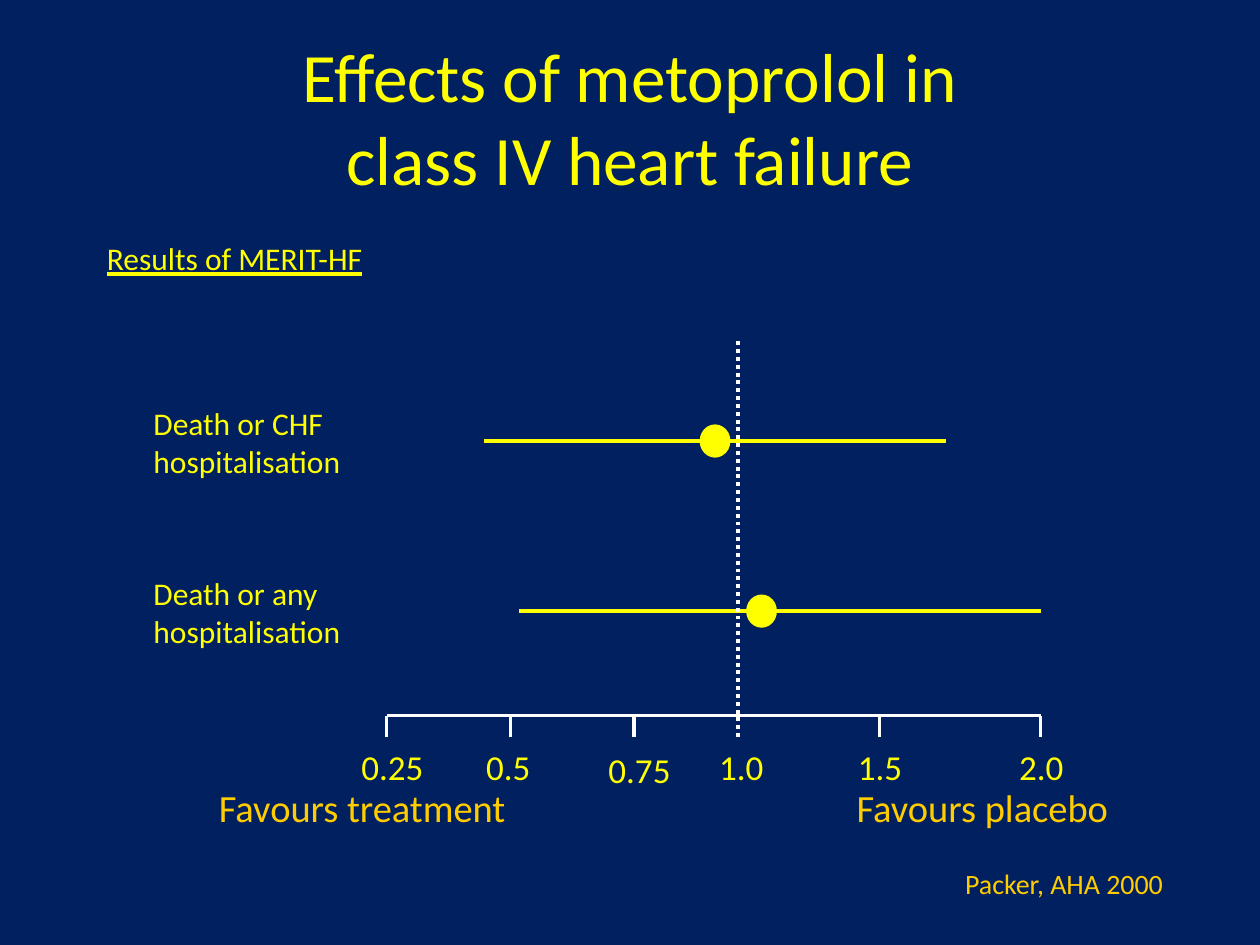
from pptx import Presentation
from pptx.dml.color import RGBColor
from pptx.enum.dml import MSO_LINE
from pptx.enum.shapes import MSO_CONNECTOR, MSO_SHAPE
from pptx.enum.text import MSO_ANCHOR, PP_ALIGN
from pptx.oxml.ns import qn
from pptx.util import Pt
from lxml.etree import SubElement

NAVY, YELLOW, GOLD, WHITE = "002060", "FFFF00", "FFCC00", "FFFFFF"
AXIS_Y, TICK_BOTTOM = 409, 421
AXIS_LEFT, AXIS_RIGHT = 221, 594.7
TICKS = [AXIS_LEFT, 291.6, 362.2, 502.6, AXIS_RIGHT]
SCALE = [
    ("0.25", 199.4, 422.6),
    ("0.5", 270.7, 422.6),
    ("0.75", 340.6, 424.1),
    ("1.0", 403.9, 422.6),
    ("1.5", 483.1, 422.6),
    ("2.0", 575.3, 422.6),
]
OUTCOMES = [
    (["Death or CHF", "hospitalisation"], 252, 276.5, 408.6, 540.7),
    (["Death or any", "hospitalisation"], 349.2, 296.6, 435.2, AXIS_RIGHT),
]


def paint(target, color):
    target.solid()
    target.fore_color.rgb = RGBColor.from_string(color)


def add_text(slide, lines, left, top, width, height, size, color=YELLOW,
             align=PP_ALIGN.LEFT, anchor=MSO_ANCHOR.TOP, underline=None):
    frame = slide.shapes.add_textbox(Pt(left), Pt(top), Pt(width), Pt(height)).text_frame
    frame.word_wrap = True
    frame.vertical_anchor = anchor
    frame.text = "\n".join(lines)
    for paragraph in frame.paragraphs:
        paragraph.alignment = align
        font = paragraph.font
        font.name, font.size, font.underline = "Calibri", Pt(size), underline
        font.color.rgb = RGBColor.from_string(color)


def add_line(slide, x1, y1, x2, y2, color, weight, dash=None):
    connector = slide.shapes.add_connector(
        MSO_CONNECTOR.STRAIGHT, Pt(x1), Pt(y1), Pt(x2), Pt(y2))
    paint(connector.line.fill, color)
    connector.line.width = Pt(weight)
    if dash:
        connector.line.dash_style = dash
    SubElement(connector._element.spPr, qn("a:effectLst"))


def add_estimate(slide, x, y, width=16.6, height=18):
    estimate = slide.shapes.add_shape(
        MSO_SHAPE.OVAL, Pt(x - width / 2), Pt(y - height / 2), Pt(width), Pt(height))
    estimate.shadow.inherit = False
    paint(estimate.fill, YELLOW)
    paint(estimate.line.fill, YELLOW)
    estimate.line.width = Pt(1)


def add_axis(slide):
    add_line(slide, AXIS_LEFT, AXIS_Y, AXIS_RIGHT, AXIS_Y, WHITE, 2)
    for x in TICKS:
        add_line(slide, x, TICK_BOTTOM, x, AXIS_Y, WHITE, 2)
    for value, left, top in SCALE:
        add_text(slide, [value], left, top, 53.3, 31, 20)


def add_outcome(slide, label, y, low, estimate, high):
    add_text(slide, label, 80.6, y - 24.5, 183.6, 65, 18)
    add_line(slide, low, y, high, y, YELLOW, 2.25)
    add_estimate(slide, estimate, y)


def main():
    deck = Presentation()
    deck.slide_width, deck.slide_height = Pt(720), Pt(540)
    slide = deck.slides.add_slide(deck.slide_layouts[6])
    paint(slide.background.fill, NAVY)

    add_text(slide, ["Effects of metoprolol in\vclass IV heart failure"],
             36, 21.6, 648, 90, 39.6, align=PP_ALIGN.CENTER, anchor=MSO_ANCHOR.MIDDLE)
    add_text(slide, ["Results of MERIT-HF"], 54, 133.2, 338.4, 36, 18, underline=True)
    add_axis(slide)
    for outcome in OUTCOMES:
        add_outcome(slide, *outcome)
    add_line(slide, 421.9, 195, 421.9, TICK_BOTTOM, WHITE, 2.25, MSO_LINE.ROUND_DOT)
    add_text(slide, ["Favours treatment"], 118, 444.2, 206.6, 34, 22, GOLD)
    add_text(slide, ["Favours placebo"], 482.4, 444.2, 190, 34, 22, GOLD)
    add_text(slide, ["Packer, AHA 2000"], 463.7, 491.8, 208, 26, 16, GOLD,
             align=PP_ALIGN.RIGHT)
    deck.save("out.pptx")


if __name__ == "__main__":
    main()
